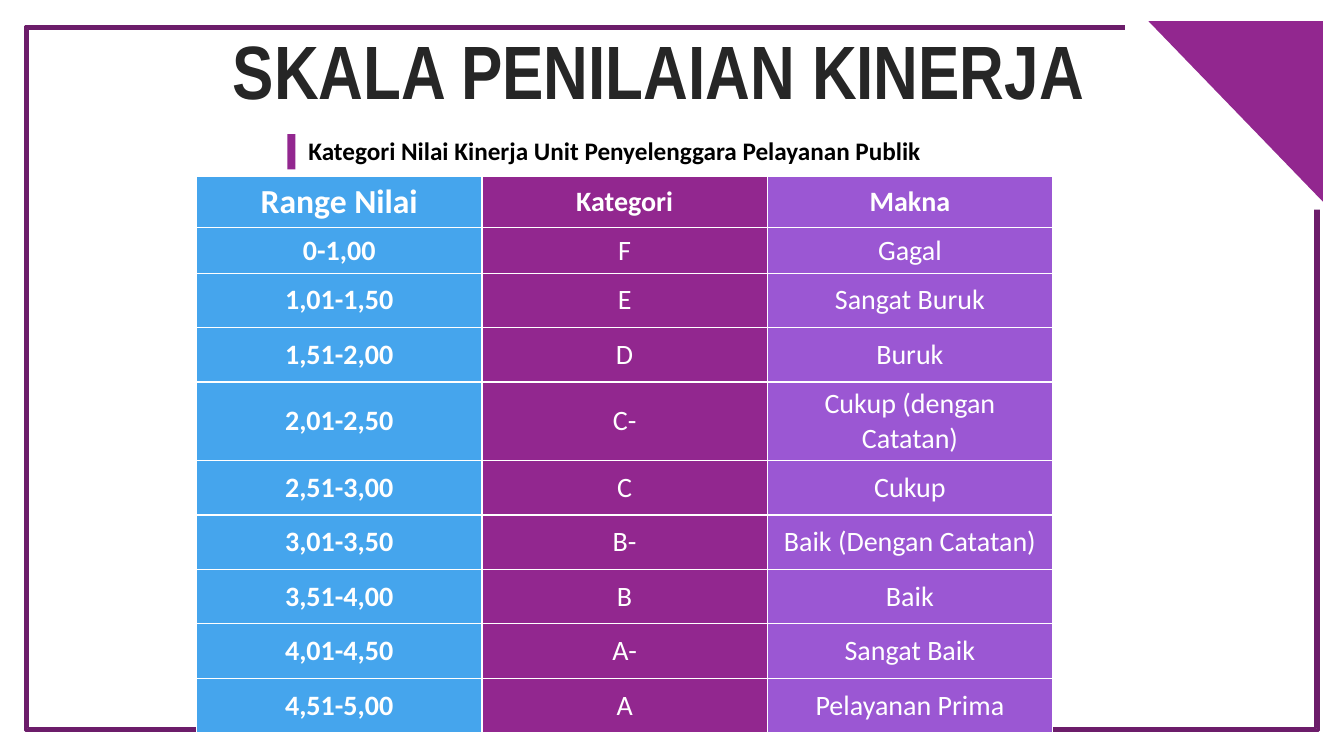
import pptx
import pptx.dml.color
import pptx.enum.shapes
import pptx.enum.text
import pptx.oxml
import pptx.oxml.ns
import pptx.util

Inches = pptx.util.Inches
SHAPES = pptx.enum.shapes.MSO_SHAPE
MIDDLE = pptx.enum.text.MSO_ANCHOR.MIDDLE
CENTER = pptx.enum.text.PP_ALIGN.CENTER

PURPLE, WHITE = "92278F", "FFFFFF"
COLUMN_FILLS = ["45A5ED", PURPLE, "9B57D3"]
HEADINGS = ["Range Nilai", "Kategori", "Makna"]
RATINGS = [
    ("0-1,00", "F", "Gagal"),
    ("1,01-1,50", "E", "Sangat Buruk"),
    ("1,51-2,00", "D", "Buruk"),
    ("2,01-2,50", "C-", "Cukup (dengan Catatan)"),
    ("2,51-3,00", "C", "Cukup"),
    ("3,01-3,50", "B-", "Baik (Dengan Catatan)"),
    ("3,51-4,00", "B", "Baik"),
    ("4,01-4,50", "A-", "Sangat Baik"),
    ("4,51-5,00", "A", "Pelayanan Prima"),
]


def rgb(value):
    return pptx.dml.color.RGBColor.from_string(value)


def style_text(paragraph, size, color, bold=True, font="Calibri"):
    for run in paragraph.runs:
        run.font.name = font
        run.font.size = pptx.util.Pt(size)
        run.font.bold = bold
        run.font.color.rgb = rgb(color)


def add_filled(slide, kind, left, top, width, height, fill):
    shape = slide.shapes.add_shape(
        kind, Inches(left), Inches(top), Inches(width), Inches(height))
    shape.shadow.inherit = False
    shape.fill.solid()
    shape.fill.fore_color.rgb = rgb(fill)
    shape.line.fill.background()
    return shape


def add_border(slide, left, top, width, height):
    """Draw the frame, opened at its top right corner for the triangle."""
    frame = add_filled(slide, SHAPES.FRAME, left, top, width, height, PURPLE)
    frame.adjustments[0] = 0.004
    frame.line.color.rgb = rgb("6C1D6A")
    frame.line.width = pptx.util.Pt(2)
    right = left + width
    add_filled(slide, SHAPES.RECTANGLE, right - 0.33, 0, 0.58, 2.08, WHITE)
    add_filled(slide, SHAPES.RECTANGLE, right - 1.92, 0, 2.17, 0.48, WHITE)
    corner = add_filled(slide, SHAPES.RIGHT_TRIANGLE,
                        right - 1.69, top - 0.05, 1.73, 1.79, PURPLE)
    corner.rotation = 180


def place_title(slide, left, top, width, height):
    title = slide.shapes.title
    title.left, title.top = Inches(left), Inches(top)
    title.width, title.height = Inches(width), Inches(height)
    frame = title.text_frame
    frame.text = "SKALA PENILAIAN KINERJA"
    frame.auto_size = pptx.enum.text.MSO_AUTO_SIZE.NONE
    frame.vertical_anchor = MIDDLE
    frame.margin_left = frame.margin_right = Inches(0.13)
    frame.margin_top = frame.margin_bottom = Inches(0.07)
    frame.paragraphs[0].alignment = CENTER
    style_text(frame.paragraphs[0], 54, "262626", font="Arial Narrow")


def add_subtitle(slide, left, top, width, height):
    add_filled(slide, SHAPES.RECTANGLE, left, top + 0.04, 0.08, 0.35, PURPLE)
    subtitle = slide.shapes.add_textbox(
        Inches(left + 0.11), Inches(top), Inches(width - 0.11), Inches(height))
    frame = subtitle.text_frame
    frame.word_wrap = True
    frame.vertical_anchor = MIDDLE
    frame.text = "Kategori Nilai Kinerja Unit Penyelenggara Pelayanan Publik"
    style_text(frame.paragraphs[0], 18, "000000")


def add_cell_borders(cell):
    properties = cell._tc.get_or_add_tcPr()
    for position, side in enumerate(("lnL", "lnR", "lnT", "lnB")):
        properties.insert(position, pptx.oxml.parse_xml(
            f'<a:{side} {pptx.oxml.ns.nsdecls("a")} w="12700"><a:solidFill>'
            f'<a:srgbClr val="{WHITE}"/></a:solidFill></a:{side}>'))


def add_rating_table(slide, left, top, width, height):
    rows = [HEADINGS, *RATINGS]
    table = slide.shapes.add_table(
        len(rows), len(HEADINGS), Inches(left), Inches(top),
        Inches(width), Inches(height)).table
    heights = [0.51, 0.45] + [0.54] * (len(rows) - 2)
    for r, (values, row_height) in enumerate(zip(rows, heights)):
        table.rows[r].height = Inches(row_height)
        for c, (value, fill) in enumerate(zip(values, COLUMN_FILLS)):
            cell = table.cell(r, c)
            cell.fill.solid()
            cell.fill.fore_color.rgb = rgb(fill)
            cell.vertical_anchor = MIDDLE
            cell.text_frame.text = value
            paragraph = cell.text_frame.paragraphs[0]
            paragraph.alignment = CENTER
            style_text(paragraph, 24 if r == c == 0 else 20, WHITE,
                       bold=r == 0 or c == 0)
            add_cell_borders(cell)


def main():
    deck = pptx.Presentation()
    deck.slide_width, deck.slide_height = Inches(13.33), Inches(7.5)
    slide = deck.slides.add_slide(deck.slide_layouts[5])
    add_border(slide, 0.25, 0.26, 12.83, 6.99)
    place_title(slide, 0.21, 0.29, 12.65, 0.79)
    add_rating_table(slide, 1.95, 1.75, 8.49, 5.24)
    add_subtitle(slide, 2.85, 1.29, 9.95, 0.4)
    deck.save("out.pptx")


if __name__ == "__main__":
    main()
